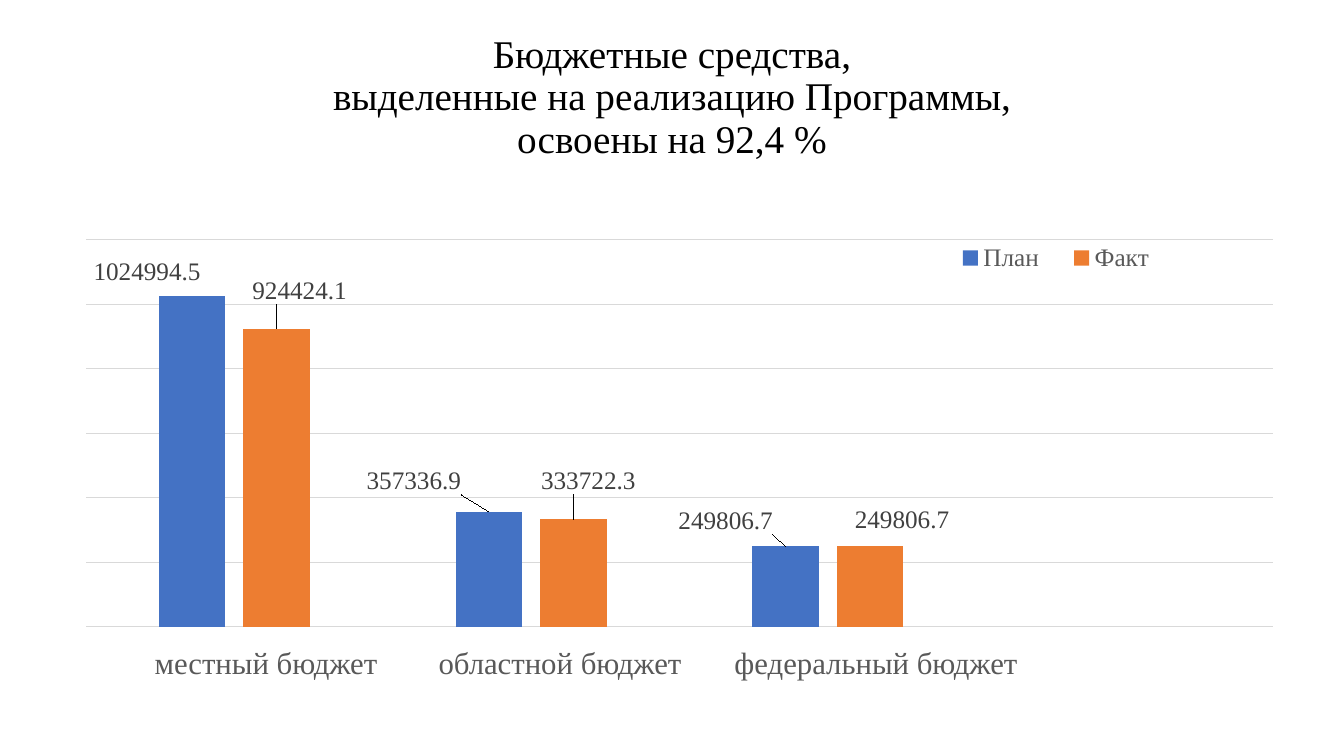
"""Build the slide on planned and actual programme budget spending."""
import lxml.etree
import pptx
import pptx.chart.data
import pptx.dml.color
import pptx.enum.chart
import pptx.enum.text
import pptx.oxml.ns
import pptx.util

TITLE = ["Бюджетные средства,", "выделенные на реализацию Программы,", "освоены на 92,4 %"]
TITLE_BOX = (67, 24, 1210, 138)
CHART_BOX = (84, 190, 1192, 510)
PLOT_BOX = (86, 240, 1187, 387)
LEGEND_BOX = (936, 242, 240, 32)
CATEGORIES = ["1", "2", "3", ""]
SERIES = [
    {"name": "План", "color": "4472C4", "values": [1024994.5, 357336.9, 249806.7, None],
     "label_shifts": [(-45, -7), (-75, -13), (-60, -8)]},
    {"name": "Факт", "color": "ED7D31", "values": [924424.1, 333722.3, 249806.7, None],
     "label_shifts": [(23, -20), (15, -21), (32, -9)]},
]
BUDGETS = [("местный бюджет", 266), ("областной бюджет", 560), ("федеральный бюджет", 876)]
BUDGET_TOP, BUDGET_WIDTH, BUDGET_HEIGHT = 646, 310, 38
THEME = {
    "font": "Times New Roman", "title": "000000", "muted": "595959", "label": "404040",
    "grid": "D9D9D9", "title_size": 28, "budget_size": 22, "chart_size": 18,
}


def emu(px):
    return pptx.util.Emu(round(px * 914400 / 100.8))


def color(name):
    return pptx.dml.color.RGBColor.from_string(THEME.get(name, name))


def style(font, size, tint):
    font.name = THEME["font"]
    font.size = pptx.util.Pt(THEME[size])
    font.color.rgb = color(tint)


def add_text(slide, box, lines, size, tint):
    shape = slide.shapes.add_textbox(*map(emu, box))
    frame = shape.text_frame
    frame.word_wrap = True
    frame.vertical_anchor = pptx.enum.text.MSO_ANCHOR.MIDDLE
    frame.margin_left = frame.margin_right = frame.margin_top = frame.margin_bottom = 0
    paragraph = frame.paragraphs[0]
    paragraph.alignment = pptx.enum.text.PP_ALIGN.CENTER
    paragraph.line_spacing = 0.9
    for index, line in enumerate(lines):
        if index:
            paragraph.add_line_break()
        run = paragraph.add_run()
        run.text = line
        style(run.font, size, tint)
    return frame


def manual_layout(**settings):
    layout = lxml.etree.Element(pptx.oxml.ns.qn("c:layout"))
    manual = lxml.etree.SubElement(layout, pptx.oxml.ns.qn("c:manualLayout"))
    for tag, value in settings.items():
        lxml.etree.SubElement(manual, pptx.oxml.ns.qn(f"c:{tag}")).set("val", str(value))
    return layout


def box_fractions(box):
    left, top, width, height = CHART_BOX
    return {"x": round((box[0] - left) / width, 4), "y": round((box[1] - top) / height, 4),
            "w": round(box[2] / width, 4), "h": round(box[3] / height, 4)}


def replace_layout(element, layout, position):
    for old in element.findall(pptx.oxml.ns.qn("c:layout")):
        element.remove(old)
    element.insert(position, layout)


def style_series(series, content):
    series.format.fill.solid()
    series.format.fill.fore_color.rgb = color(content["color"])
    outside = pptx.enum.chart.XL_LABEL_POSITION.OUTSIDE_END
    labels = series.data_labels
    labels.show_value = True
    labels.position = outside
    style(labels.font, "chart_size", "label")
    for index, shift in enumerate(content["label_shifts"]):
        label = series.points[index].data_label
        style(label.font, "chart_size", "label")
        label.position = outside
        element = series._element.xpath(f"c:dLbls/c:dLbl[c:idx/@val='{index}']")[0]
        replace_layout(element, manual_layout(x=round(shift[0] / CHART_BOX[2], 4),
                                              y=round(shift[1] / CHART_BOX[3], 4)), 1)


def add_budget_chart(slide):
    data = pptx.chart.data.CategoryChartData()
    data.categories = CATEGORIES
    for content in SERIES:
        data.add_series(content["name"], content["values"])
    chart = slide.shapes.add_chart(
        pptx.enum.chart.XL_CHART_TYPE.COLUMN_CLUSTERED, *map(emu, CHART_BOX), data).chart
    style(chart.font, "chart_size", "muted")
    chart.has_title = False
    plot = chart.plots[0]
    plot.gap_width, plot.overlap, plot.vary_by_categories = 219, -27, False
    for series, content in zip(plot.series, SERIES):
        style_series(series, content)
    chart.category_axis.visible = False
    axis = chart.value_axis
    axis.visible = False
    axis.minimum_scale, axis.maximum_scale, axis.major_unit = 0, 1200000, 200000
    axis.has_major_gridlines = True
    axis.major_gridlines.format.line.color.rgb = color("grid")
    axis.major_gridlines.format.line.width = pptx.util.Pt(0.75)
    chart.has_legend = True
    legend = chart.legend
    legend.position = pptx.enum.chart.XL_LEGEND_POSITION.BOTTOM
    legend.include_in_layout = False
    style(legend.font, "chart_size", "muted")
    replace_layout(legend._element, manual_layout(
        xMode="edge", yMode="edge", **box_fractions(LEGEND_BOX)), 1)
    replace_layout(chart._chartSpace.chart.plotArea, manual_layout(
        layoutTarget="inner", xMode="edge", yMode="edge", **box_fractions(PLOT_BOX)), 0)


def main():
    presentation = pptx.Presentation()
    presentation.slide_width, presentation.slide_height = emu(1344), emu(756)
    slide = presentation.slides.add_slide(presentation.slide_layouts[6])
    title = add_text(slide, TITLE_BOX, TITLE, "title_size", "title")
    title.margin_top = emu(10)
    add_budget_chart(slide)
    for name, center in BUDGETS:
        box = (center - BUDGET_WIDTH // 2, BUDGET_TOP, BUDGET_WIDTH, BUDGET_HEIGHT)
        add_text(slide, box, [name], "budget_size", "muted")
    presentation.save("out.pptx")


if __name__ == "__main__":
    main()
